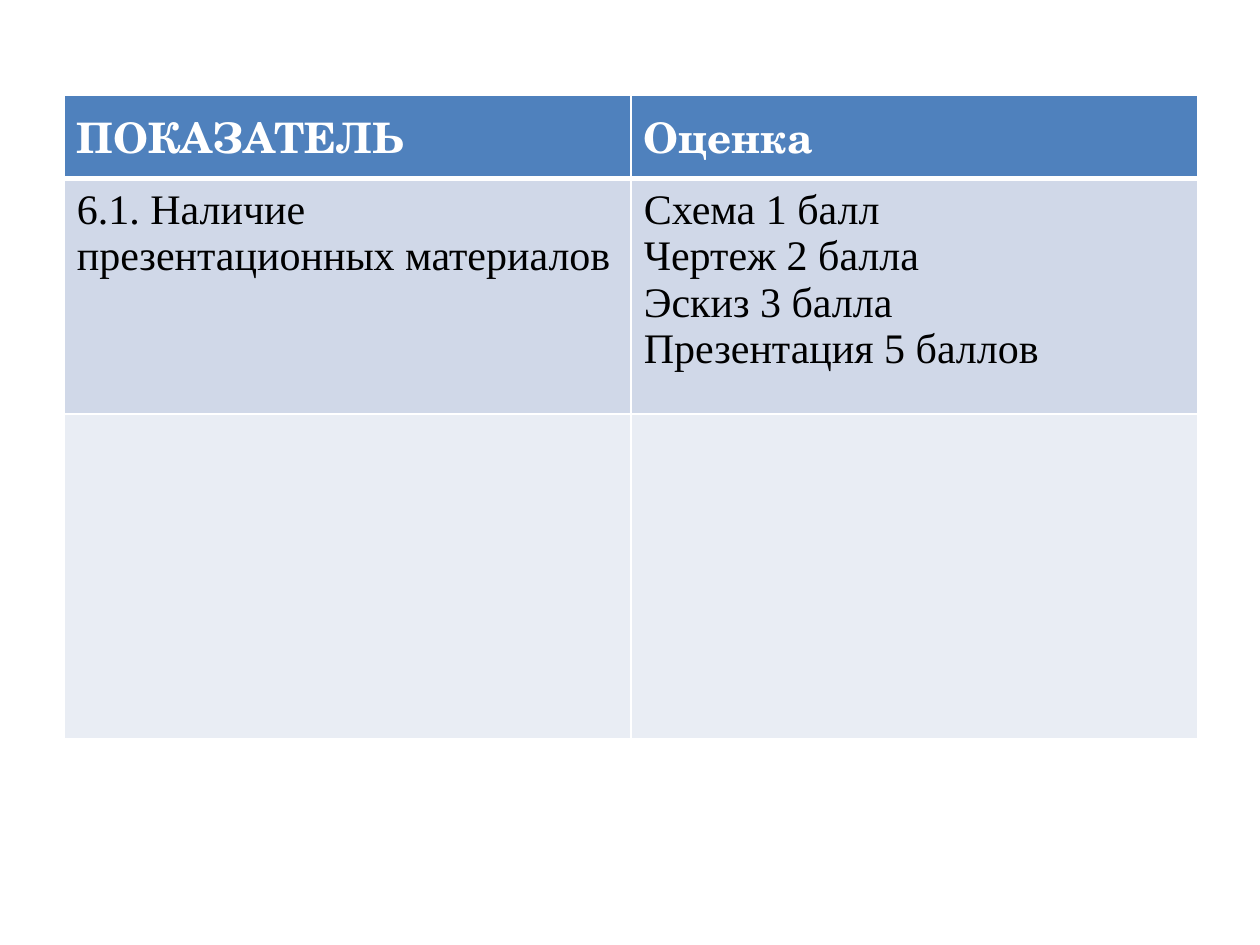
from pptx import Presentation
from pptx.dml.color import RGBColor
from pptx.oxml.ns import qn
from pptx.util import Inches, Pt
from lxml.etree import SubElement

WHITE, BLACK, BLUE = "FFFFFF", "000000", "4F81BD"
ROWS = [
    ["ПОКАЗАТЕЛЬ", "Оценка"],
    ["6.1. Наличие презентационных материалов",
     "Схема 1 балл\nЧертеж 2 балла\nЭскиз 3 балла\nПрезентация 5 баллов"],
    ["", ""],
]
FILLS = [BLUE, "D0D8E8", "E9EDF4"]
HEIGHTS = [0.51, 1.87, 2.58]


def color(code):
    return RGBColor.from_string(code)


class Deck:
    head_font, body_font = "TeX Gyre Schola", "Times New Roman"
    size = Pt(24)

    def __init__(self):
        self.prs = Presentation()
        self.prs.slide_width, self.prs.slide_height = Inches(10), Inches(7.5)
        self.slide = self.prs.slides.add_slide(self.prs.slide_layouts[6])

    def table(self, left, top, width):
        frame = self.slide.shapes.add_table(
            len(ROWS), len(ROWS[0]), Inches(left), Inches(top),
            Inches(width), Inches(sum(HEIGHTS)))
        grid = frame.table
        for r, texts in enumerate(ROWS):
            grid.rows[r].height = Inches(HEIGHTS[r])
            for c, text in enumerate(texts):
                self.cell(grid.cell(r, c), text, r)

    def cell(self, cell, text, row):
        head = row == 0
        self.border(cell, {"L": 1, "R": 1, "T": 3 if row == 1 else 1,
                           "B": 3 if head else 1})
        cell.fill.solid()
        cell.fill.fore_color.rgb = color(FILLS[row])
        cell.margin_left = cell.margin_right = Inches(0.1)
        cell.margin_top = cell.margin_bottom = Inches(0.07)
        cell.text = text
        for par in cell.text_frame.paragraphs:
            font = par.font
            font.name = self.head_font if head else self.body_font
            font.size, font.bold = self.size, head
            font.color.rgb = color(WHITE if head else BLACK)

    def border(self, cell, widths):
        """Draw white sides, with widths in points; call before the fill."""
        props = cell._tc.get_or_add_tcPr()
        for side, width in widths.items():
            line = SubElement(props, qn(f"a:ln{side}"), w=str(Pt(width)))
            fill = SubElement(line, qn("a:solidFill"))
            SubElement(fill, qn("a:srgbClr"), val=WHITE)


deck = Deck()
deck.table(0.51, 0.76, 9)
deck.prs.save("out.pptx")
